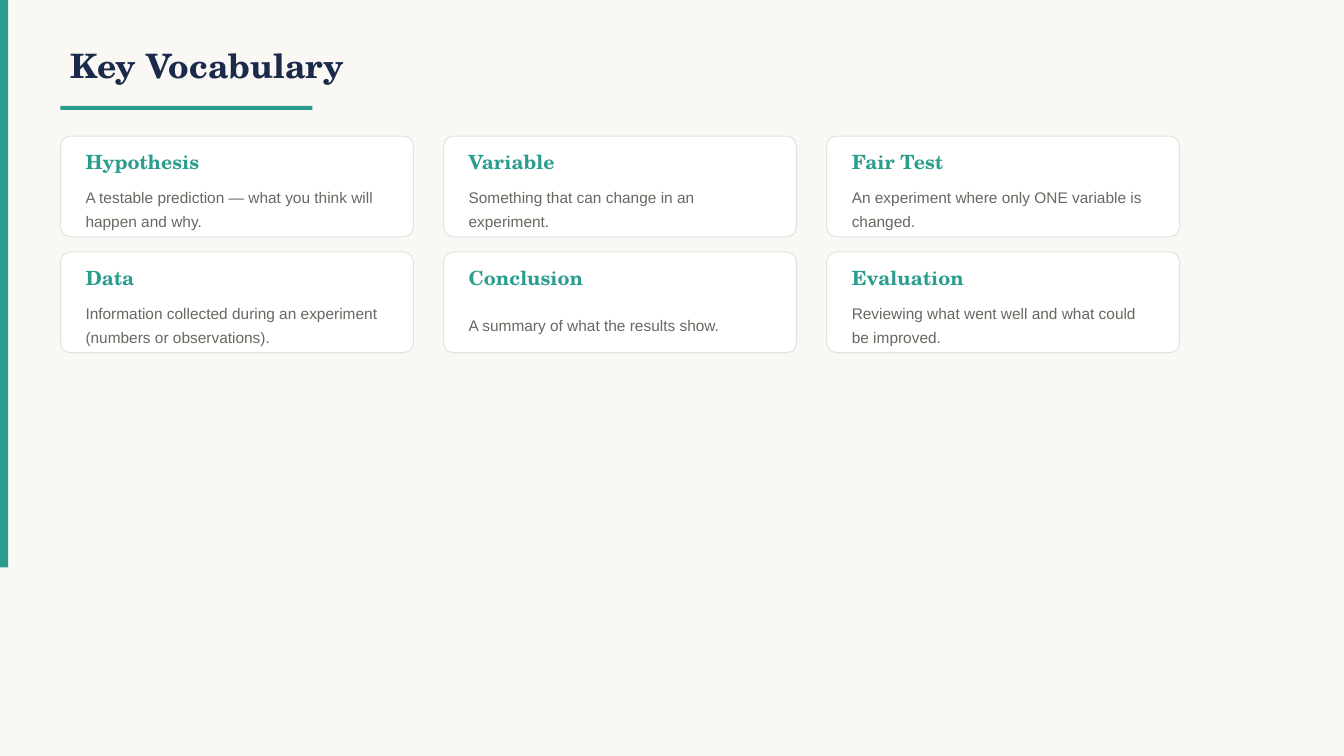
from dataclasses import dataclass

from pptx import Presentation
from pptx.dml.color import RGBColor
from pptx.enum.shapes import MSO_SHAPE
from pptx.enum.text import MSO_ANCHOR, MSO_AUTO_SIZE, PP_ALIGN
from pptx.util import Emu, Pt

EMU_PER_PX = 9144
TITLE_ONLY = 5
RECTANGLE = MSO_SHAPE.RECTANGLE
ROUNDED = MSO_SHAPE.ROUNDED_RECTANGLE
MIDDLE = MSO_ANCHOR.MIDDLE
NO_AUTOFIT = MSO_AUTO_SIZE.NONE
LEFT = PP_ALIGN.LEFT


@dataclass(frozen=True)
class TextStyle:
    """Font, size and colour of one kind of text."""
    font: str
    size: int
    color: str
    bold: bool = False
    line_spacing: float = 1.0


@dataclass(frozen=True)
class Theme:
    """Colours and type styles of the slide."""
    background: str = "FAF8F5"
    accent: str = "2A9D8F"
    card: str = "FFFFFF"
    card_border: str = "E5E2DC"
    border_width: float = 0.75
    title: TextStyle = TextStyle("TeX Gyre Schola", 24, "1B2A4A", True)
    term: TextStyle = TextStyle("TeX Gyre Schola", 14, "2A9D8F", True)
    definition: TextStyle = TextStyle("Arial", 11, "6B6660", line_spacing=1.3)


THEME = Theme()
COLUMNS = 3
GRID_LEFT, GRID_TOP = 60, 135
COLUMN_STEP, ROW_STEP = 380, 115
CARD_WIDTH, CARD_HEIGHT = 350, 100
VOCABULARY = [
    ("Hypothesis", "A testable prediction — what you think will happen and why."),
    ("Variable", "Something that can change in an experiment."),
    ("Fair Test", "An experiment where only ONE variable is changed."),
    ("Data", "Information collected during an experiment (numbers or observations)."),
    ("Conclusion", "A summary of what the results show."),
    ("Evaluation", "Reviewing what went well and what could be improved."),
]


def px(length):
    """Turn pixels into EMU."""
    return Emu(length * EMU_PER_PX)


def box(*lengths):
    """Turn left, top, width and height in pixels into EMU."""
    return [px(length) for length in lengths]


def write(frame, text, style):
    """Fill a text frame with one styled paragraph."""
    frame.text = text
    frame.word_wrap = True
    frame.auto_size = NO_AUTOFIT
    frame.vertical_anchor = MIDDLE
    paragraph = frame.paragraphs[0]
    paragraph.alignment = LEFT
    paragraph.line_spacing = style.line_spacing
    font = paragraph.runs[0].font
    font.name = style.font
    font.size = Pt(style.size)
    font.bold = style.bold
    font.color.rgb = RGBColor.from_string(style.color)


def add_title(slide, text):
    """Place the heading in the title placeholder."""
    title = slide.shapes.title
    title.left, title.top, title.width, title.height = box(60, 30, 1000, 70)
    write(title.text_frame, text, THEME.title)


def add_panel(slide, preset, bounds, color):
    """Add a flat filled shape without an outline."""
    panel = slide.shapes.add_shape(preset, *box(*bounds))
    panel.shadow.inherit = False
    panel.fill.solid()
    panel.fill.fore_color.rgb = RGBColor.from_string(color)
    panel.line.fill.background()
    return panel


def add_label(slide, bounds, text, style):
    """Add a text box with one styled paragraph."""
    label = slide.shapes.add_textbox(*box(*bounds))
    write(label.text_frame, text, style)


def add_card(slide, left, top, term, definition):
    """Add a rounded card holding a term and its definition."""
    card = add_panel(slide, ROUNDED, (left, top, CARD_WIDTH, CARD_HEIGHT), THEME.card)
    card.adjustments[0] = 0.1
    card.line.color.rgb = RGBColor.from_string(THEME.card_border)
    card.line.width = Pt(THEME.border_width)
    add_label(slide, (left + 15, top + 8, 320, 35), term, THEME.term)
    add_label(slide, (left + 15, top + 45, 320, 50), definition, THEME.definition)


def main():
    """Build the vocabulary slide and save it."""
    deck = Presentation()
    deck.slide_width, deck.slide_height = px(1333), px(750)
    slide = deck.slides.add_slide(deck.slide_layouts[TITLE_ONLY])
    backdrop = slide.background.fill
    backdrop.solid()
    backdrop.fore_color.rgb = RGBColor.from_string(THEME.background)

    add_panel(slide, RECTANGLE, (0, 0, 8, 563), THEME.accent)
    add_title(slide, "Key Vocabulary")
    add_panel(slide, RECTANGLE, (60, 105, 250, 4), THEME.accent)
    for index, (term, definition) in enumerate(VOCABULARY):
        row, column = divmod(index, COLUMNS)
        left = GRID_LEFT + column * COLUMN_STEP
        top = GRID_TOP + row * ROW_STEP
        add_card(slide, left, top, term, definition)
    deck.save("out.pptx")


if __name__ == "__main__":
    main()
